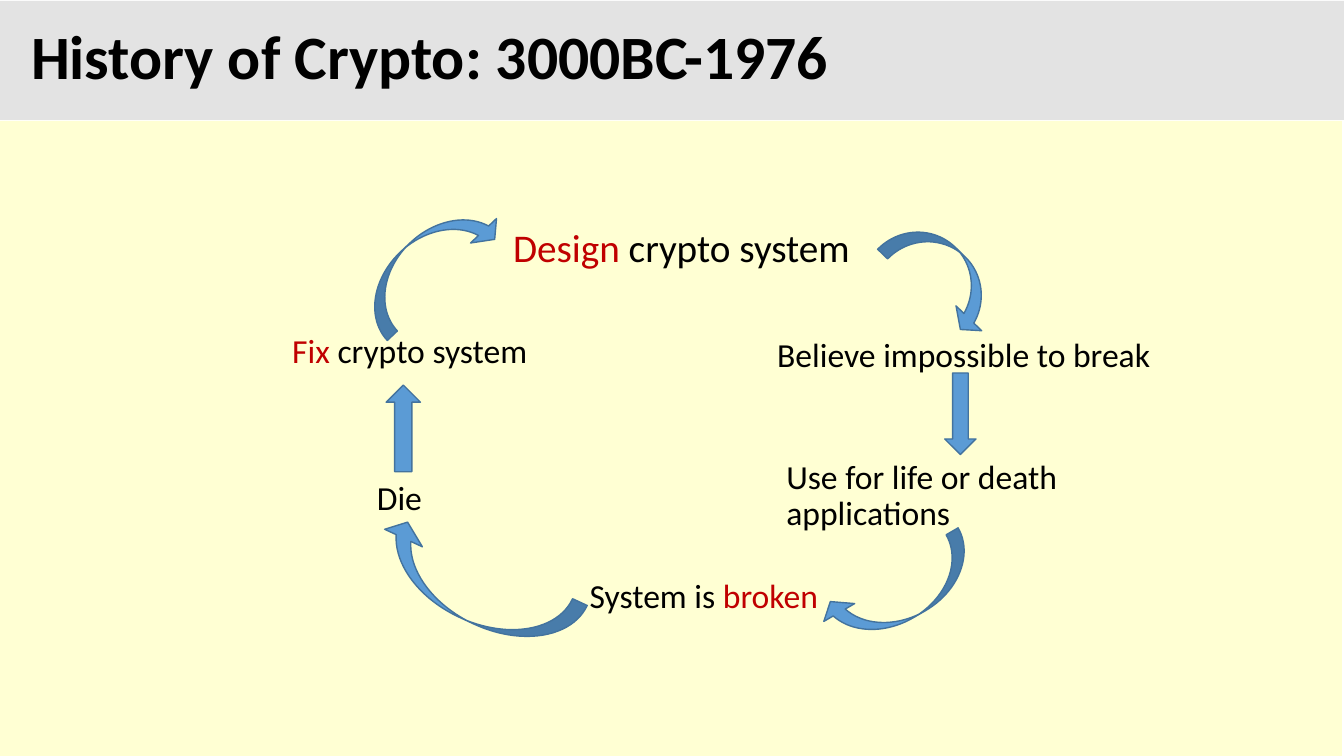
from pptx import Presentation
from pptx.dml.color import RGBColor
from pptx.enum.shapes import MSO_SHAPE
from pptx.enum.text import MSO_ANCHOR
from pptx.util import Inches, Pt

RECT = MSO_SHAPE.RECTANGLE
CURVE = MSO_SHAPE.CURVED_DOWN_ARROW
UP = MSO_SHAPE.UP_ARROW
TOP = MSO_ANCHOR.TOP
MIDDLE = MSO_ANCHOR.MIDDLE

GRAY = RGBColor(0xE3, 0xE3, 0xE3)
CREAM = RGBColor(0xFF, 0xFF, 0xD3)
BLACK = RGBColor(0, 0, 0)
RED = RGBColor(0xC0, 0, 0)
BLUE = RGBColor(0x5B, 0x9B, 0xD5)
NAVY = RGBColor(0x43, 0x73, 0x9E)

WIDTH, HEIGHT = 13.33, 7.5
BEND = (0.25, 0.644, 0.25)

STEPS = [
    (4.99, 1.02, 4.06, 0.89, 28, [("Design", RED), (" crypto system", BLACK)]),
    (7.61, 2.11, 4.06, 0.89, 24, [("Believe impossible to break", BLACK)]),
    (7.7, 3.32, 4.18, 1.05, 24, [("Use for life or death applications", BLACK)]),
    (5.75, 4.5, 2.95, 0.71, 24, [("System is ", BLACK), ("broken", RED)]),
    (3.64, 3.53, 1.4, 0.64, 24, [("Die", BLACK)]),
    (2.8, 2.07, 3.14, 0.64, 24, [("Fix", RED), (" crypto system", BLACK)]),
]

ARROWS = [
    (CURVE, 8.71, 1.26, 1.32, 0.55, 44.1),
    (CURVE, 8.11, 4.41, 1.64, 0.55, 150),
    (CURVE, 3.62, 4.32, 2.17, 0.64, 204.9),
    (UP, 3.83, 2.62, 0.34, 0.86, 0),
    (UP, 9.37, 2.5, 0.31, 0.81, 180),
    (CURVE, 3.43, 1.14, 1.64, 0.55, 316.7),
]


def assign(item, values):
    for name, value in values.items():
        setattr(item, name, value)


def add_shape(slide, kind, box, fill, line=None):
    shape = slide.shapes.add_shape(kind, *map(Inches, box))
    shape.shadow.inherit = False
    shape.fill.solid()
    shape.fill.fore_color.rgb = fill
    if line is None:
        shape.line.fill.background()
    else:
        shape.line.color.rgb = line
        shape.line.width = Pt(1)
    return shape


def add_text(slide, box, parts, size, bold=False, anchor=TOP, before=10):
    frame = slide.shapes.add_textbox(*map(Inches, box)).text_frame
    assign(frame, {"word_wrap": True, "vertical_anchor": anchor})
    para = frame.paragraphs[0]
    assign(para, {"line_spacing": 0.9, "space_before": Pt(before)})
    for text, color in parts:
        run = para.add_run()
        run.text = text
        assign(run.font, {"name": "Calibri", "size": Pt(size), "bold": bold})
        run.font.color.rgb = color


def add_header(slide, left, top, width, height):
    add_shape(slide, RECT, (left, top + 0.01, width, height - 0.01), GRAY)
    box = (left + 0.21, top, width - 0.21, height)
    title = [("History of Crypto: 3000BC-1976", BLACK)]
    add_text(slide, box, title, 44, True, MIDDLE, 0)


def add_cycle(slide, left, top, width, height):
    add_shape(slide, RECT, (left, top, width, height), CREAM)
    for x, y, wide, high, size, parts in STEPS:
        add_text(slide, (left + x, top + y, wide, high), parts, size)
    for kind, x, y, wide, high, angle in ARROWS:
        box = (left + x, top + y, wide, high)
        arrow = add_shape(slide, kind, box, BLUE, NAVY)
        arrow.rotation = angle
        if kind == CURVE:
            for index, value in enumerate(BEND):
                arrow.adjustments[index] = value


def main():
    deck = Presentation()
    assign(deck, {"slide_width": Inches(WIDTH), "slide_height": Inches(HEIGHT)})
    slide = deck.slides.add_slide(deck.slide_layouts[6])
    add_header(slide, 0, 0, WIDTH, 1.19)
    add_cycle(slide, 0, 1.2, 13.31, HEIGHT - 1.2)
    deck.save("out.pptx")


if __name__ == "__main__":
    main()
